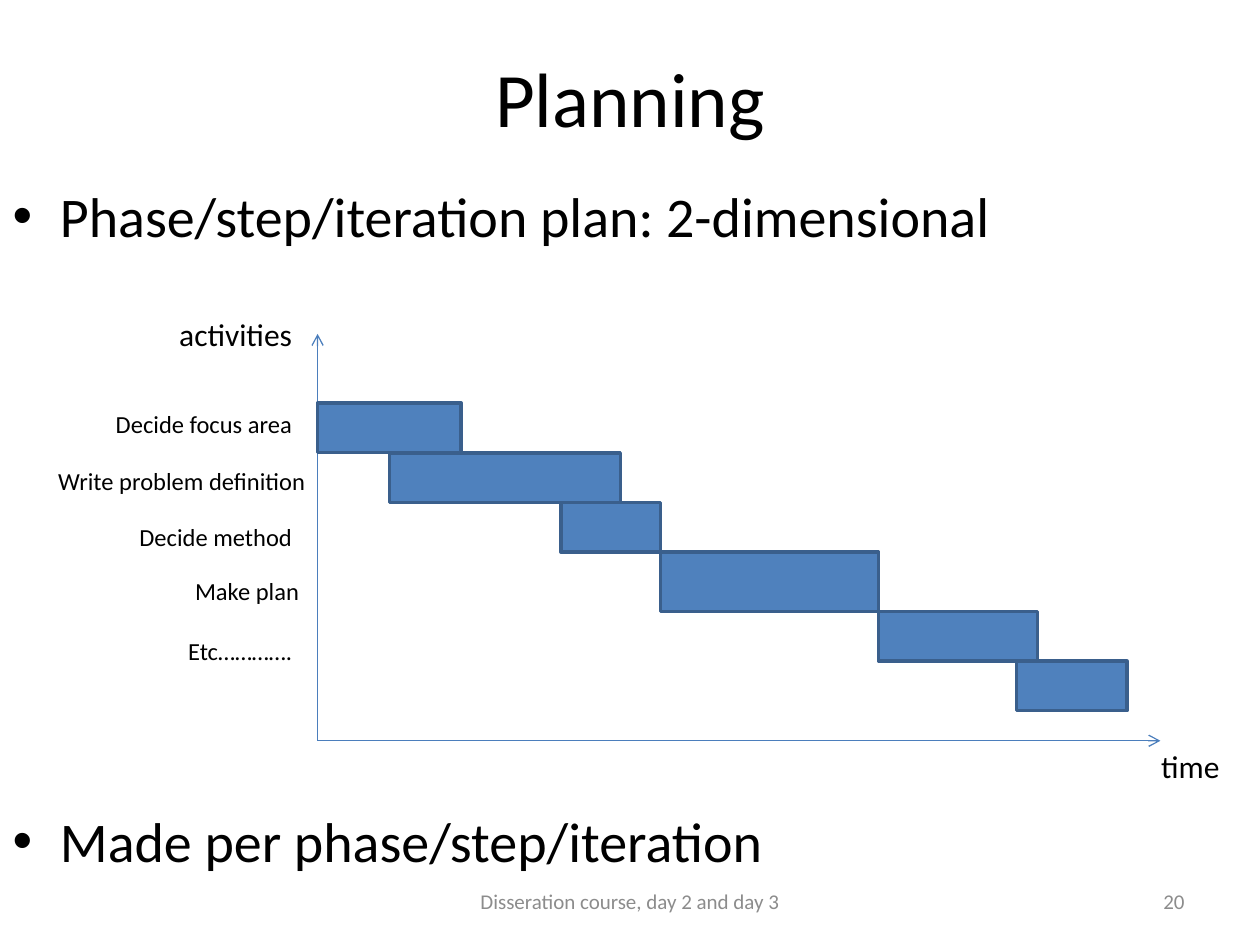
import pptx
import pptx.util
import pptx.dml.color
import pptx.enum.shapes
import pptx.enum.text
from lxml import etree

Pt = pptx.util.Pt
ALIGN = pptx.enum.text.PP_ALIGN
ANCHOR = pptx.enum.text.MSO_ANCHOR
FONT = "Calibri"
BLACK, GREY = "000000", "8C8C8C"
FILL, EDGE, AXIS = "4F81BD", "3A5F8C", "4B7EBC"

TITLE = "Planning"
POINTS = ["Phase/step/iteration plan: 2-dimensional",
          "Made per phase/step/iteration"]
GAP = 319  # room for the chart between the two points

# left, width, height; each bar starts where the one above ends
BARS = [(181.5, 82, 28.35), (222.5, 132, 28.35), (320.5, 57, 28.35),
        (377.5, 124.5, 34), (502, 91, 28.35), (581, 63, 28.35)]
BAR_TOP = 230.4
ORIGIN = (181.5, 423.3)
ENDS = [(181.5, 190.8), (663.1, 423.3)]

# text, right edge, top
LABELS = [("Decide focus area", 174, 230.4),
          ("Write problem definition", 181.5, 262.8),
          ("Decide method", 174, 294.7),
          ("Make plan", 178, 325.4),
          ("Etc………….", 174, 360)]
LABEL_W, LABEL_H = 157, 24.5
NAME_H = 29


def color(code):
    return pptx.dml.color.RGBColor.from_string(code)


def style(par, size, code=BLACK, align=None):
    if align is not None:
        par.alignment = align
    for run in par.runs:
        run.font.name = FONT
        run.font.size = Pt(size)
        run.font.color.rgb = color(code)


def place(shape, left, top, width, height):
    shape.left, shape.top = Pt(left), Pt(top)
    shape.width, shape.height = Pt(width), Pt(height)


def add_text(slide, text, box, size, align, code=BLACK, anchor=ANCHOR.TOP):
    frame = slide.shapes.add_textbox(*map(Pt, box)).text_frame
    frame.word_wrap = True
    frame.vertical_anchor = anchor
    frame.text = text
    style(frame.paragraphs[0], size, code, align)


def add_axis(slide, start, end):
    line = slide.shapes.add_connector(
        pptx.enum.shapes.MSO_CONNECTOR.STRAIGHT, *map(Pt, start + end))
    line.line.color.rgb = color(AXIS)
    line.line.width = Pt(0.75)
    ns = pptx.oxml.ns.qn
    etree.SubElement(line.line._get_or_add_ln(), ns("a:tailEnd"), type="arrow")
    etree.SubElement(line._element.spPr, ns("a:effectLst"))


def add_bar(slide, box):
    bar = slide.shapes.add_shape(
        pptx.enum.shapes.MSO_SHAPE.RECTANGLE, *map(Pt, box))
    bar.shadow.inherit = False
    bar.fill.solid()
    bar.fill.fore_color.rgb = color(FILL)
    bar.line.color.rgb = color(EDGE)
    bar.line.width = Pt(2)


def main():
    deck = pptx.Presentation()
    deck.slide_width, deck.slide_height = Pt(720), Pt(540)
    slide = deck.slides.add_slide(deck.slide_layouts[1])

    title, body = slide.placeholders
    place(title, 36, 21.6, 648, 67)
    title.text_frame.text = TITLE
    title.text_frame.vertical_anchor = ANCHOR.MIDDLE
    style(title.text_frame.paragraphs[0], 44, align=ALIGN.CENTER)

    place(body, 0, 100, 720, 440)
    frame = body.text_frame
    frame.auto_size = pptx.enum.text.MSO_AUTO_SIZE.NONE
    frame.text = "\n".join(POINTS)
    for par in frame.paragraphs:
        style(par, 32)
    frame.paragraphs[1].space_before = Pt(GAP)

    for end in ENDS:
        add_axis(slide, ORIGIN, end)
    add_text(slide, "activities", (74, 176.4, 100, NAME_H), 18, ALIGN.RIGHT)
    add_text(slide, "time", (656.4, 423.3, 60, NAME_H), 18, ALIGN.LEFT)

    top = BAR_TOP
    for left, width, height in BARS:
        add_bar(slide, (left, top, width, height))
        top += height
    for text, right, top in LABELS:
        box = (right - LABEL_W, top, LABEL_W, LABEL_H)
        add_text(slide, text, box, 14, ALIGN.RIGHT)

    add_text(slide, "20", (516, 500.5, 168, 28.75), 12,
             ALIGN.RIGHT, GREY, ANCHOR.MIDDLE)
    add_text(slide, "Disseration course, day 2 and day 3",
             (246, 500.5, 228, 28.75), 12, ALIGN.CENTER, GREY, ANCHOR.MIDDLE)
    deck.save("out.pptx")


if __name__ == "__main__":
    main()
